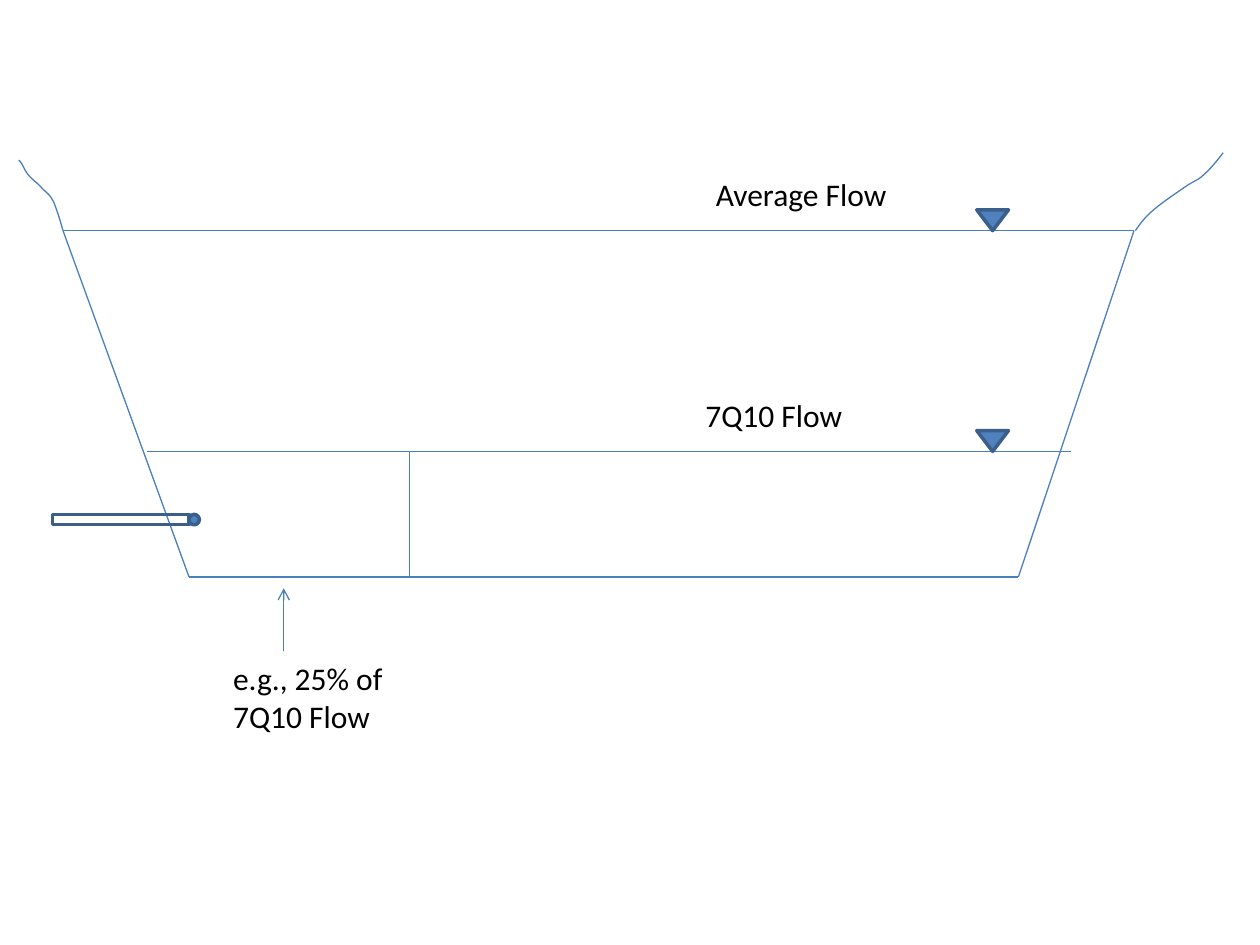
from lxml.etree import SubElement
from pptx import Presentation
from pptx.dml.color import RGBColor
from pptx.enum.shapes import MSO_CONNECTOR as Link, MSO_SHAPE as Shape
from pptx.oxml.ns import qn
from pptx.util import Cm, Pt

WATER_LINE = "4B7EBC"
OUTLINE = "3A5F8C"
FILL = "4F81BD"
CURVE_STEPS = 10

# Bank profiles as cubic Bezier points in cm, measured from the rim of the channel
LEFT_BANK = [(0, 0), (-0.05, -0.2), (-0.13, -0.43), (-0.18, -0.56),
             (-0.25, -0.71), (-0.3, -0.74), (-0.41, -0.84),
             (-0.48, -0.94), (-0.64, -1.04), (-0.71, -1.14),
             (-0.79, -1.24), (-0.81, -1.35), (-0.89, -1.42)]
RIGHT_BANK = [(0.03, 0), (0.13, -0.15), (0.23, -0.28), (0.41, -0.43),
              (0.58, -0.58), (1.12, -0.94), (1.12, -0.94),
              (1.3, -1.04), (1.32, -1.04), (1.42, -1.14),
              (1.55, -1.24), (1.8, -1.57), (1.8, -1.57)]


def color(hex_string):
    return RGBColor.from_string(hex_string)


def add_line(slide, start, end, arrow=False):
    line = slide.shapes.add_connector(Link.STRAIGHT, *map(Cm, start + end))
    line.line.color.rgb = color(WATER_LINE)
    line.line.width = Pt(0.75)
    if arrow:
        SubElement(line.line._get_or_add_ln(), qn("a:tailEnd"), type="arrow")
    SubElement(line._element.spPr, qn("a:effectLst"))


def add_solid(slide, preset, left, top, width, height, fill=FILL, rotation=0):
    solid = slide.shapes.add_shape(preset, *map(Cm, (left, top, width, height)))
    solid.shadow.inherit = False
    solid.rotation = rotation
    if fill:
        solid.fill.solid()
        solid.fill.fore_color.rgb = color(fill)
    else:
        solid.fill.background()
    solid.line.color.rgb = color(OUTLINE)
    solid.line.width = Pt(2)


def add_text(slide, text, left, top, width=4.02, height=1.03, size=18,
             font="Calibri", ink="000000"):
    frame = slide.shapes.add_textbox(*map(Cm, (left, top, width, height))).text_frame
    frame.word_wrap = True
    run = frame.paragraphs[0].add_run()
    run.text = text
    run.font.size = Pt(size)
    run.font.name = font
    run.font.color.rgb = color(ink)


def bezier_points(points):
    """Yield points along a chain of cubic curves."""
    for i in range(0, len(points) - 1, 3):
        for step in range(1, CURVE_STEPS + 1):
            t = step / CURVE_STEPS
            weights = ((1 - t) ** 3, 3 * t * (1 - t) ** 2, 3 * t * t * (1 - t), t ** 3)
            yield tuple(sum(w * p[axis] for w, p in zip(weights, points[i:i + 4]))
                        for axis in (0, 1))


def add_bank(slide, rim_x, rim_y, profile):
    def place(point):
        return Cm(rim_x + point[0]), Cm(rim_y + point[1])

    builder = slide.shapes.build_freeform(*place(profile[0]))
    builder.add_line_segments([place(p) for p in bezier_points(profile)], close=False)
    bank = builder.convert_to_shape()
    bank.shadow.inherit = False
    bank.fill.background()
    bank.line.color.rgb = color(WATER_LINE)
    bank.line.width = Pt(0.75)


def add_channel(slide, left, top, width, height):
    right, bottom = left + width, top + height
    bed_left, bed_right = left + 2.54, left + 19.26
    low_water = top + 4.45
    divider = left + 6.99

    # Water surface, bed and side slopes
    rim = [(left, top), (right, top)]
    bed = [(bed_left, bottom), (bed_right, bottom)]
    for start, end in (rim, bed, (bed[1], rim[1]), (bed[0], rim[0])):
        add_line(slide, start, end)

    # Low-flow surface and mixing zone divider
    add_line(slide, (right - 1.27, low_water), (left + 1.69, low_water))
    add_line(slide, (divider, bottom), (divider, low_water))

    # Banks above the rim
    add_bank(slide, right, top, RIGHT_BANK)
    add_bank(slide, left, top, LEFT_BANK)

    # Water level markers with their labels
    for level, label, label_x in ((top, "Average Flow", left + 12.91),
                                  (low_water, "7Q10 Flow", left + 12.7)):
        add_solid(slide, Shape.ISOSCELES_TRIANGLE, left + 18.42, level - 0.42,
                  0.64, 0.42, rotation=180)
        add_text(slide, label, label_x, level - 1.25)


def add_outfall(slide, left, top, length, bore):
    add_solid(slide, Shape.RECTANGLE, left, top, length, bore, fill=None)
    add_solid(slide, Shape.OVAL, left + length, top, bore, bore)


def add_mixing_note(slide, left, top):
    add_line(slide, (left + 1.27, top + 1.27), (left + 1.27, top), arrow=True)
    add_text(slide, "e.g., 25% of 7Q10 Flow", left, top + 1.3, height=1.8)


def main():
    prs = Presentation()
    prs.slide_width, prs.slide_height = Cm(25.4), Cm(19.05)
    slide = prs.slides.add_slide(prs.slide_layouts[6])
    add_channel(slide, 1.27, 4.65, 21.59, 6.98)
    add_outfall(slide, 1.06, 10.37, 2.75, 0.21)
    add_mixing_note(slide, 4.45, 11.86)
    prs.save("out.pptx")


if __name__ == "__main__":
    main()
